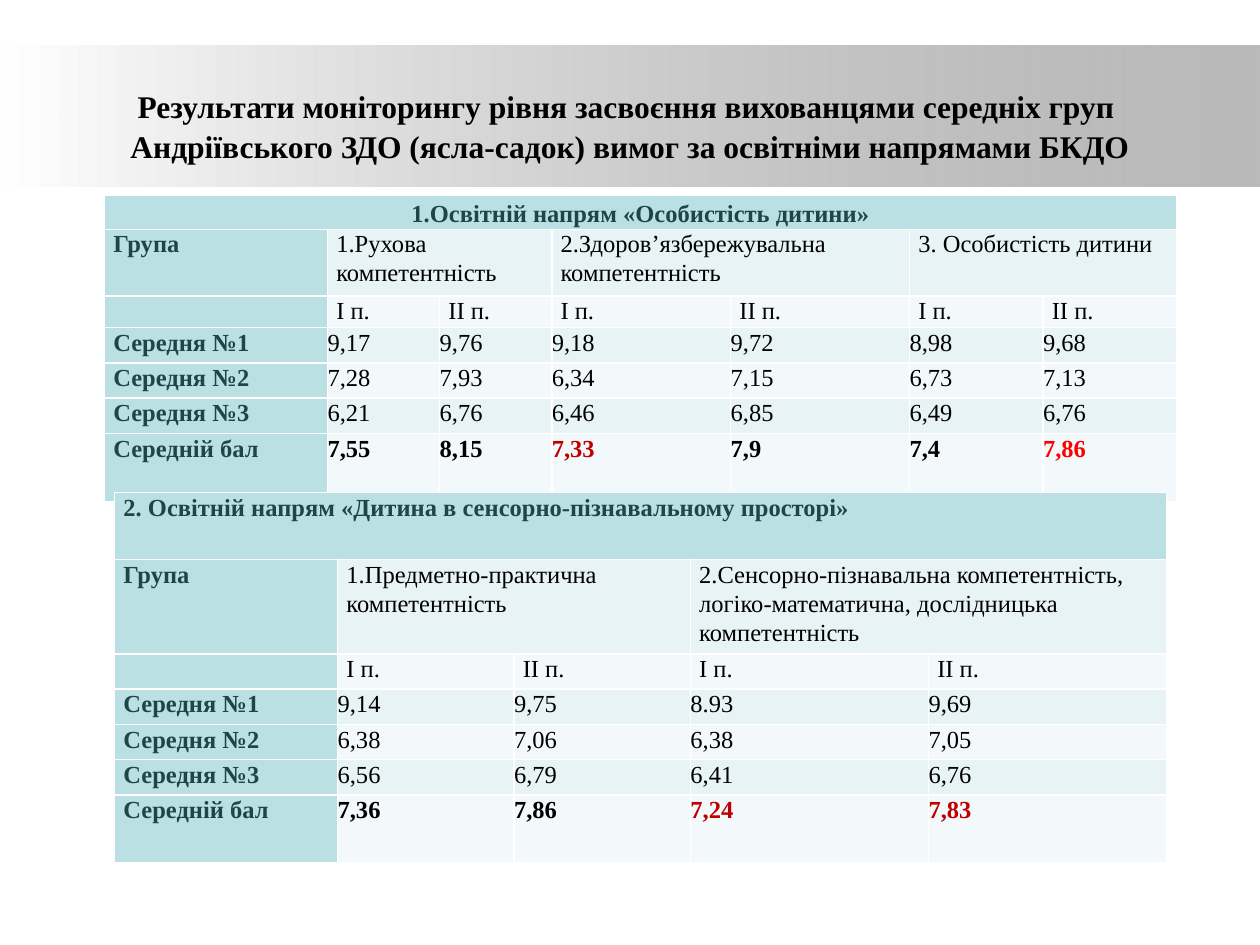
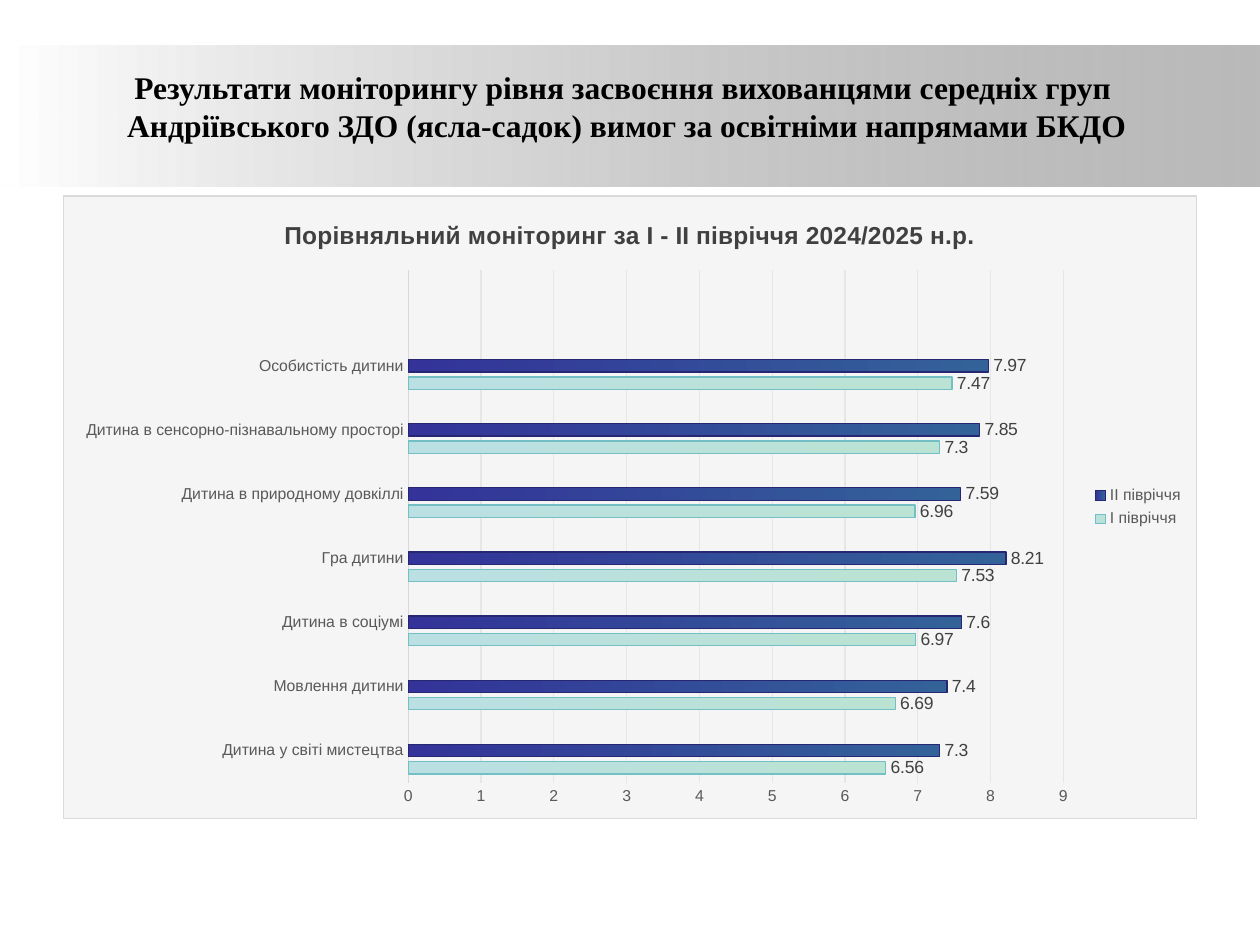
from lxml.etree import SubElement
from pptx import Presentation
from pptx.chart.data import CategoryChartData
from pptx.dml.color import RGBColor
from pptx.enum.chart import XL_CHART_TYPE, XL_LABEL_POSITION, XL_LEGEND_POSITION, XL_TICK_MARK
from pptx.enum.shapes import MSO_SHAPE
from pptx.enum.text import MSO_ANCHOR, PP_ALIGN
from pptx.oxml import parse_xml
from pptx.oxml.ns import nsdecls, qn
from pptx.util import Inches, Pt

BLACK = RGBColor(0x00, 0x00, 0x00)
WHITE = RGBColor(0xFF, 0xFF, 0xFF)
GRAY = RGBColor(0x80, 0x80, 0x80)
TEAL = RGBColor(0xBB, 0xE0, 0xE3)
MINT = RGBColor(0xBB, 0xE3, 0xD3)
PALE = RGBColor(0xE7, 0xF3, 0xF4)
FAINT = RGBColor(0xF3, 0xF9, 0xFA)
DEEP = RGBColor(0x1E, 0x46, 0x49)
WINE = RGBColor(0xC0, 0x00, 0x00)
RED = RGBColor(0xFF, 0x00, 0x00)
STEEL = RGBColor(0x33, 0x62, 0x99)
NAVY = RGBColor(0x33, 0x33, 0x99)
EDGE = RGBColor(0x72, 0xBF, 0xC5)
DARK = RGBColor(0x26, 0x26, 0x73)
INK = RGBColor(0x40, 0x40, 0x40)
SOFT = RGBColor(0x59, 0x59, 0x59)
RULE = RGBColor(0xD9, 0xD9, 0xD9)
GRID = RGBColor(0xE6, 0xE6, 0xE6)

SERIF, SANS = "Times New Roman", "Arial"
TITLE = ("Результати моніторингу рівня засвоєння вихованцями середніх груп \n"
         "Андріївського ЗДО (ясла-садок) вимог за освітніми напрямами БКДО")


def style(font, name, size, color, bold=False):
    font.name, font.size, font.bold = name, Pt(size), bold
    font.color.rgb = color


def blend(fill, first, last, angle):
    fill.gradient()
    fill.gradient_angle = angle
    for stop, color, place in zip(fill.gradient_stops, (first, last), (0, 1)):
        stop.color.rgb = color
        stop.position = place


deck = Presentation()
deck.slide_width, deck.slide_height = Inches(10), Inches(7.5)

# Band and title on both slides
slides = []
for box, pitch in (((0.59, 0.52, 8.82, 0.94), 1.07), ((0.5, 0.13, 8.95, 1.42), 1)):
    slide = deck.slides.add_slide(deck.slide_layouts[6])
    slides.append(slide)
    band = slide.shapes.add_shape(MSO_SHAPE.RECTANGLE, 0, Inches(0.36),
                                  deck.slide_width, Inches(1.12))
    band.shadow.inherit = False
    band.line.fill.background()
    blend(band.fill, WHITE, GRAY, 0)
    tone = list(band._element.spPr.iter(qn("a:srgbClr")))[-1]
    SubElement(tone, qn("a:alpha"), val="54000")

    frame = slide.shapes.add_textbox(*map(Inches, box)).text_frame
    frame.word_wrap = True
    frame.vertical_anchor = MSO_ANCHOR.MIDDLE
    para = frame.paragraphs[0]
    para.text = TITLE.replace("\n", "\v")
    para.alignment = PP_ALIGN.CENTER
    para.line_spacing = pitch
    for run in para.runs:
        style(run.font, SERIF, 18, BLACK, True)

# Score tables: left, top, column widths, row heights, heading, skills, scores, marks
tables = [
    (0.83, 1.55, [1.77, 0.89, 0.89, 1.42, 1.42, 1.06, 1.06],
     [0.27, 0.53, 0.25, 0.28, 0.28, 0.28, 0.54],
     "1.Освітній напрям «Особистість дитини»",
     ["1.Рухова компетентність", "2.Здоров’язбережувальна компетентність",
      "3. Особистість дитини"],
     ["9,17 9,76 9,18 9,72 8,98 9,68", "7,28 7,93 6,34 7,15 6,73 7,13",
      "6,21 6,76 6,46 6,85 6,49 6,76", "7,55 8,15 7,33 7,9 7,4 7,86"],
     {3: WINE, 6: RED}),
    (0.91, 3.91, [1.77, 1.4, 1.4, 1.89, 1.89],
     [0.53, 0.75, 0.28, 0.28, 0.28, 0.28, 0.54],
     "2. Освітній напрям «Дитина в сенсорно-пізнавальному просторі»",
     ["1.Предметно-практична компетентність",
      "2.Сенсорно-пізнавальна компетентність, логіко-математична, "
      "дослідницька компетентність"],
     ["9,14 9,75 8.93 9,69", "6,38 7,06 6,38 7,05",
      "6,56 6,79 6,41 6,76", "7,36 7,86 7,24 7,83"],
     {3: WINE, 4: WINE}),
]
groups = ["Середня №1", "Середня №2", "Середня №3", "Середній бал"]

for left, top, widths, heights, head, skills, scores, marks in tables:
    count = len(widths)
    rows = [[head] + [""] * (count - 1),
            ["Група"] + [text for skill in skills for text in (skill, "")],
            [""] + ["І п.", "ІІ п."] * len(skills)]
    rows += [[group] + line.split() for group, line in zip(groups, scores)]
    grid = slides[0].shapes.add_table(
        len(rows), count, Inches(left), Inches(top),
        Inches(sum(widths)), Inches(sum(heights))).table
    for col, width in zip(grid.columns, widths):
        col.width = Inches(width)
    for row, height in zip(grid.rows, heights):
        row.height = Inches(height)
    for r, row in enumerate(rows):
        for c, text in enumerate(row):
            cell = grid.cell(r, c)
            label = r == 0 or c == 0
            cell.fill.solid()
            cell.fill.fore_color.rgb = TEAL if label else PALE if r % 2 else FAINT
            cell.margin_top = cell.margin_bottom = 0
            cell.margin_left = cell.margin_right = Inches(0.07 if label or r < 3 else 0)
            para = cell.text_frame.paragraphs[0]
            para.line_spacing = 1.07
            if not text:
                para._p.get_or_add_endParaRPr().set("sz", "1400")
                continue
            para.text = text
            last = r == len(rows) - 1
            color = DEEP if label else marks.get(c, BLACK) if last else BLACK
            style(para.runs[0].font, SERIF, 14, color, label or last)
    grid.cell(0, 0).merge(grid.cell(0, count - 1))
    for c in range(1, count, 2):
        grid.cell(1, c).merge(grid.cell(1, c + 1))
    if count == 7:
        first = grid.cell(0, 0)
        first.vertical_anchor = MSO_ANCHOR.MIDDLE
        first.text_frame.paragraphs[0].alignment = PP_ALIGN.CENTER
        first.text_frame.paragraphs[0].line_spacing = 1.15

# Chart of both half-years
data = CategoryChartData()
data.categories = ["Дитина у світі мистецтва", "Мовлення дитини", "Дитина в соціумі",
                   "Гра дитини", "Дитина в природному довкіллі",
                   "Дитина в сенсорно-пізнавальному просторі", "Особистість дитини", ""]
data.add_series("І півріччя", [6.56, 6.69, 6.97, 7.53, 6.96, 7.3, 7.47, None])
data.add_series("ІІ півріччя", [7.3, 7.4, 7.6, 8.21, 7.59, 7.85, 7.97, None])
data.add_series("Ряды 3", [None] * 8)
chart = slides[1].shapes.add_chart(
    XL_CHART_TYPE.BAR_CLUSTERED, Inches(0.5), Inches(1.55),
    Inches(9), Inches(4.95), data).chart
style(chart.font, SANS, 10, BLACK)
space = chart._chartSpace
space.find(qn("c:txPr")).addprevious(parse_xml(
    f'<c:spPr {nsdecls("c", "a")}><a:solidFill><a:srgbClr val="F5F5F5"/></a:solidFill>'
    f'<a:ln w="9525"><a:solidFill><a:srgbClr val="{RULE}"/></a:solidFill></a:ln></c:spPr>'))

chart.has_title = True
para = chart.chart_title.text_frame.paragraphs[0]
para.text = "Порівняльний моніторинг за І - ІІ півріччя 2024/2025 н.р."
style(para.runs[0].font, SANS, 14, INK, True)
chart.chart_title.include_in_layout = False

plot = chart.plots[0]
plot.gap_width, plot.overlap = 140, -40
plot.vary_by_categories = False
for bar, first, last, edge in zip(plot.series, (MINT, STEEL), (TEAL, NAVY), (EDGE, DARK)):
    blend(bar.format.fill, first, last, 180)
    bar.format.line.color.rgb = edge
    bar.format.line.width = Pt(0.75)
    tags = bar.data_labels
    tags.show_value = True
    tags.position = XL_LABEL_POSITION.OUTSIDE_END
    style(tags.font, SANS, 10, INK)

for axis in (chart.category_axis, chart.value_axis):
    axis.major_tick_mark = axis.minor_tick_mark = XL_TICK_MARK.NONE
    style(axis.tick_labels.font, SANS, 9, SOFT)
chart.category_axis.format.line.color.rgb = RULE
chart.category_axis.format.line.width = Pt(0.75)
scale = chart.value_axis
scale.minimum_scale, scale.maximum_scale, scale.major_unit = 0, 9, 1
scale.format.line.fill.background()
scale.major_gridlines.format.line.color.rgb = GRID
scale.major_gridlines.format.line.width = Pt(0.75)

chart.has_legend = True
legend = chart.legend
legend.position = XL_LEGEND_POSITION.RIGHT
legend.include_in_layout = False
style(legend.font, SANS, 9, SOFT)
# Bar legends count from the top, so entry 0 is the empty series
legend._element.find(qn("c:legendPos")).addnext(parse_xml(
    f'<c:legendEntry {nsdecls("c")}><c:idx val="0"/><c:delete val="1"/></c:legendEntry>'))

deck.save("out.pptx")
